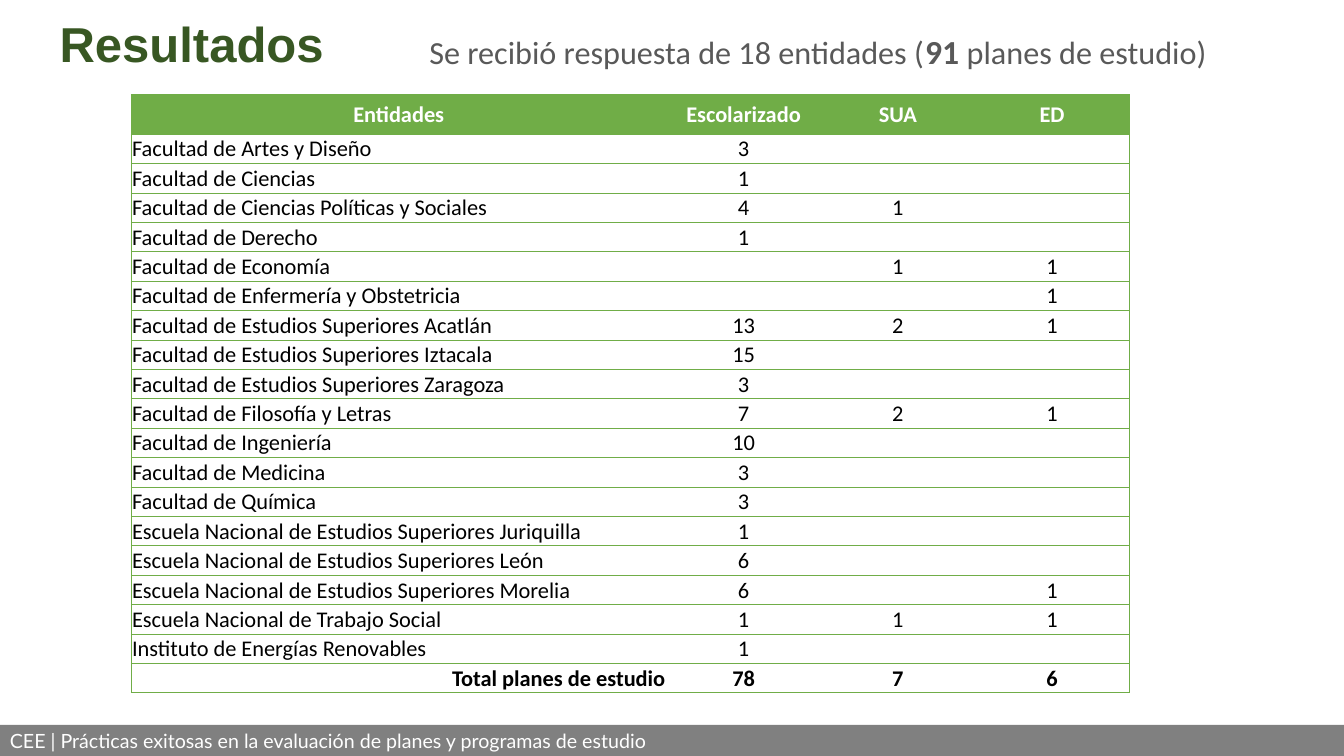
from lxml import etree
from pptx import Presentation
from pptx import util as u
from pptx.dml.color import RGBColor
from pptx.enum import shapes, text
from pptx.oxml.ns import qn

THEME = {
    "title": {"name": "Arial", "size": 35, "color": "385723", "bold": True},
    "subtitle": {"name": "Calibri", "size": 23, "color": "595959", "bold": False},
    "count": {"name": "Calibri", "size": 24, "color": "595959", "bold": True},
    "footer": {"name": "Lato", "size": 14, "color": "FFFFFF", "bold": False},
    "header": {"name": "Calibri", "size": 16, "color": "FFFFFF", "bold": True},
    "body": {"name": "Calibri", "size": 16, "color": "000000", "bold": False},
    "total": {"name": "Calibri", "size": 16, "color": "000000", "bold": True},
    "green": "70AD47",
    "gray": "808080",
}
ALIGN = text.PP_ALIGN
ANCHOR = text.MSO_ANCHOR


def add_run(p, content, style):
    r = p.add_run()
    r.text = content
    for key, value in THEME[style].items():
        if key == "color":
            r.font.color.rgb = RGBColor.from_string(value)
        else:
            setattr(r.font, key, u.Pt(value) if key == "size" else value)


def add_border(cell, side, visible):
    ln = etree.SubElement(cell._tc.get_or_add_tcPr(), qn(f"a:ln{side}"), w=str(u.Pt(0.5)))
    if visible:
        fill = etree.SubElement(ln, qn("a:solidFill"))
        etree.SubElement(fill, qn("a:srgbClr"), val=THEME["green"])
    else:
        etree.SubElement(ln, qn("a:noFill"))


prs = Presentation()
prs.slide_width, prs.slide_height = u.Inches(13.33), u.Inches(7.5)
s = prs.slides.add_slide(prs.slide_layouts[5])

title = s.shapes.title
title.left, title.top, title.width, title.height = map(u.Inches, (0.49, 0.2, 8.3, 0.58))
subtitle = s.shapes.add_textbox(*map(u.Inches, (4.16, 0.3, 8.3, 0.48)))
headings = [
    (title, ANCHOR.BOTTOM, [("Resultados", "title")]),
    (subtitle, ANCHOR.TOP, [
        ("Se recibió respuesta de 18 entidades (", "subtitle"),
        ("91 ", "count"),
        ("planes de estudio)", "subtitle"),
    ]),
]
for sp, anchor, runs in headings:
    tf = sp.text_frame
    tf.word_wrap = True
    tf.auto_size = text.MSO_AUTO_SIZE.NONE
    tf.vertical_anchor = anchor
    p = tf.paragraphs[0]
    p.alignment = ALIGN.LEFT
    p.line_spacing = 0.9
    for content, style in runs:
        add_run(p, content, style)

footer = s.shapes.add_shape(shapes.MSO_SHAPE.RECTANGLE, *map(u.Inches, (0, 7.19, 13.33, 0.31)))
footer.shadow.inherit = False
footer.fill.solid()
footer.fill.fore_color.rgb = RGBColor.from_string(THEME["gray"])
footer.line.fill.background()
tf = footer.text_frame
tf.word_wrap = True
tf.vertical_anchor = ANCHOR.MIDDLE
p = tf.paragraphs[0]
p.alignment = ALIGN.JUSTIFY
add_run(p, "CEE | Prácticas exitosas en la evaluación de planes y programas de estudio", "footer")

rows = [
    ("Entidades", "Escolarizado", "SUA", "ED"),
    ("Facultad de Artes y Diseño", "3", "", ""),
    ("Facultad de Ciencias", "1", "", ""),
    ("Facultad de Ciencias Políticas y Sociales", "4", "1", ""),
    ("Facultad de Derecho", "1", "", ""),
    ("Facultad de Economía", "", "1", "1"),
    ("Facultad de Enfermería y Obstetricia", "", "", "1"),
    ("Facultad de Estudios Superiores Acatlán", "13", "2", "1"),
    ("Facultad de Estudios Superiores Iztacala", "15", "", ""),
    ("Facultad de Estudios Superiores Zaragoza", "3", "", ""),
    ("Facultad de Filosofía y Letras", "7", "2", "1"),
    ("Facultad de Ingeniería", "10", "", ""),
    ("Facultad de Medicina", "3", "", ""),
    ("Facultad de Química", "3", "", ""),
    ("Escuela Nacional de Estudios Superiores Juriquilla", "1", "", ""),
    ("Escuela Nacional de Estudios Superiores León", "6", "", ""),
    ("Escuela Nacional de Estudios Superiores Morelia", "6", "", "1"),
    ("Escuela Nacional de Trabajo Social", "1", "1", "1"),
    ("Instituto de Energías Renovables", "1", "", ""),
    ("Total planes de estudio", "78", "7", "6"),
]
widths = [5.31, 1.53, 1.53, 1.53]
header_height, table_height = 0.39, 5.94
last_row, last_col = len(rows) - 1, len(widths) - 1
table = s.shapes.add_table(
    len(rows), len(widths), *map(u.Inches, (1.3, 0.94, sum(widths), table_height))).table
table.horz_banding = False
for column, width in zip(table.columns, widths):
    column.width = u.Inches(width)

for i, row in enumerate(rows):
    style = "header" if i == 0 else "total" if i == last_row else "body"
    name_align = {"header": ALIGN.CENTER, "body": ALIGN.LEFT, "total": ALIGN.RIGHT}[style]
    height = header_height if i == 0 else (table_height - header_height) / last_row
    table.rows[i].height = u.Inches(height)
    for j, content in enumerate(row):
        cell = table.cell(i, j)
        cell.vertical_anchor = ANCHOR.MIDDLE
        for side, margin in {"left": 0.01, "right": 0.01, "top": 0.01, "bottom": 0}.items():
            setattr(cell, f"margin_{side}", u.Inches(margin))
        for side, visible in {"L": j == 0, "R": j == last_col, "T": True, "B": True}.items():
            add_border(cell, side, visible)
        if i == 0:
            cell.fill.solid()
            cell.fill.fore_color.rgb = RGBColor.from_string(THEME["green"])
        else:
            cell.fill.background()
        p = cell.text_frame.paragraphs[0]
        p.alignment = name_align if j == 0 else ALIGN.CENTER
        if content:
            add_run(p, content, style)
        else:
            etree.SubElement(p._p, qn("a:endParaRPr"), sz=str(THEME[style]["size"] * 100))

prs.save("out.pptx")
